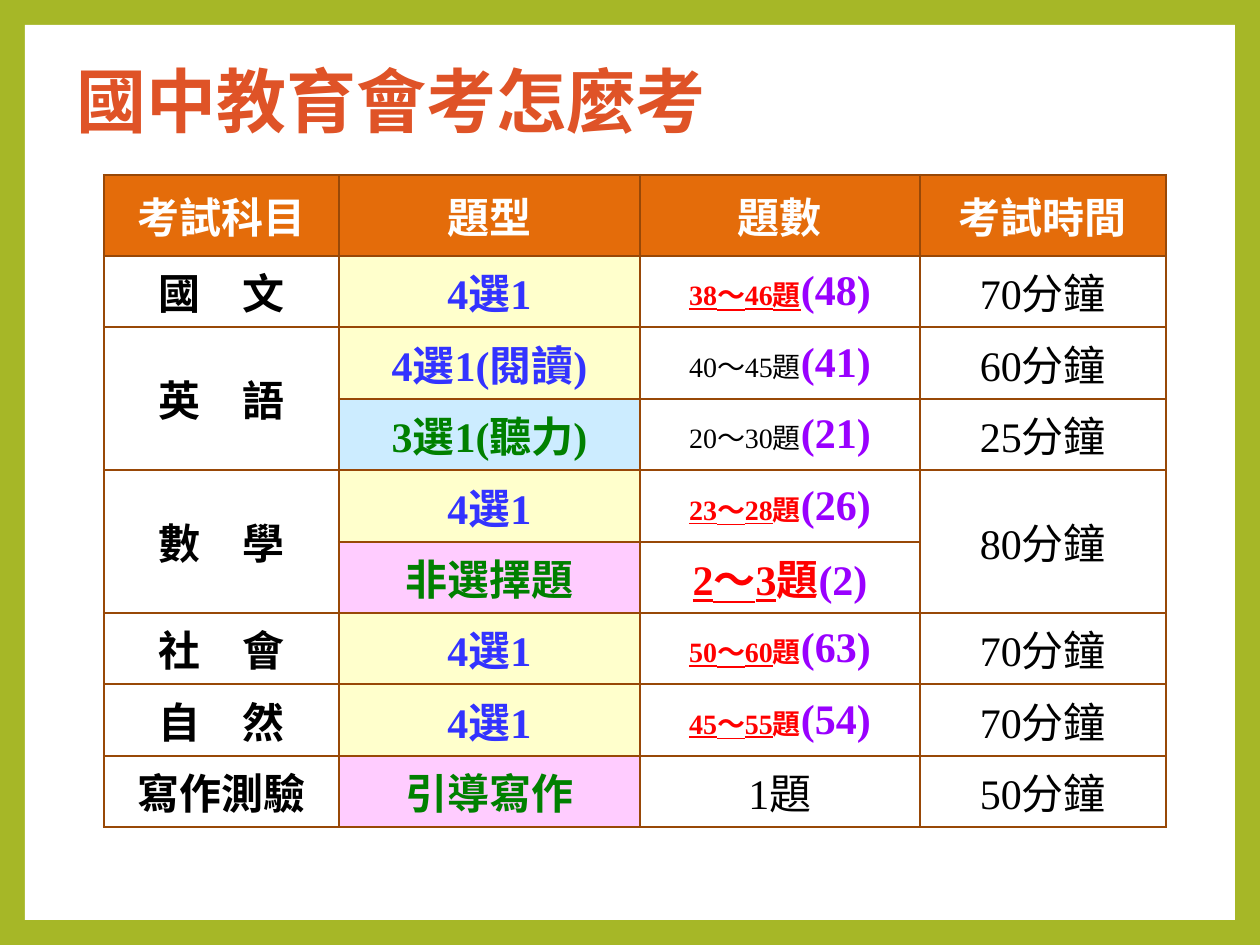
from dataclasses import dataclass

from lxml.etree import SubElement
from pptx import Presentation
from pptx.dml.color import RGBColor
from pptx.enum.shapes import MSO_SHAPE
from pptx.enum.text import MSO_ANCHOR, MSO_AUTO_SIZE, PP_ALIGN
from pptx.oxml import parse_xml
from pptx.oxml.ns import nsdecls, qn
from pptx.util import Emu, Pt

CJK_FONT = "Noto Sans CJK SC"
LATIN_FONT = "Times New Roman"
BLACK, WHITE, RED = "000000", "FFFFFF", "FF0000"
BLUE, GREEN, PURPLE = "3333FF", "008000", "9900FF"
YELLOW, SKY, PINK = "FFFFCC", "CCECFF", "FFCCFF"
LIME, ORANGE, BROWN, TITLE_RED = "A6B727", "E46C0A", "984807", "DF5327"

COLUMN_WIDTHS = (235, 301, 280, 246)
HEADER_HEIGHT, BODY_HEIGHT = 81, 571
CELL_INSET = 3


@dataclass(frozen=True)
class Span:
    text: str
    color: str = BLACK
    size: int = 24
    bold: bool = True
    underline: bool = False


@dataclass(frozen=True)
class Entry:
    spans: tuple[Span, ...]
    fill: str | None = None
    rows: int = 1


def px(length: int) -> Emu:
    return Emu(round(length * 914400 / 126))


def rgb(value: str) -> RGBColor:
    return RGBColor.from_string(value)


def write(paragraph, text: str, *, font: str = LATIN_FONT, size: int = 24,
          color: str = BLACK, bold: bool = True, underline: bool = False) -> None:
    run = paragraph.add_run()
    run.text = text
    run.font.name = font
    run.font.size = Pt(size)
    run.font.bold = bold
    run.font.underline = underline
    run.font.color.rgb = rgb(color)
    SubElement(run.font._element, qn("a:ea"), typeface=CJK_FONT)


def header(text: str) -> Entry:
    return Entry((Span(text, WHITE),), ORANGE)


def subject(text: str, rows: int = 1) -> Entry:
    return Entry((Span(text),), rows=rows)


def kind(text: str, color: str = BLUE, fill: str = YELLOW) -> Entry:
    return Entry((Span(text, color),), fill)


def plain(text: str, rows: int = 1) -> Entry:
    return Entry((Span(text, bold=False),), rows=rows)


def count(span_range: str, actual: str, size: int = 16,
          underline_unit: bool = False) -> Entry:
    """Red question range, with the actual number in purple."""
    return Entry((Span(span_range, RED, size, underline=True),
                  Span("題", RED, size, underline=underline_unit),
                  Span(actual, PURPLE)))


def plain_count(text: str, actual: str) -> Entry:
    return Entry((Span(text, size=16, bold=False), Span(actual, PURPLE)))


# None marks a cell covered by the merged cell above it.
ROWS: list[tuple[Entry | None, ...]] = [
    tuple(map(header, ("考試科目", "題型", "題數", "考試時間"))),
    (subject("國　文"), kind("4選1"),
     count("38～46", "(48)", underline_unit=True), plain("70分鐘")),
    (subject("英　語", 2), kind("4選1(閱讀)"),
     plain_count("40～45題", "(41)"), plain("60分鐘")),
    (None, kind("3選1(聽力)", GREEN, SKY),
     plain_count("20～30題", "(21)"), plain("25分鐘")),
    (subject("數　學", 2), kind("4選1"), count("23～28", "(26)"), plain("80分鐘", 2)),
    (None, kind("非選擇題", GREEN, PINK), count("2～3", "(2)", 24), None),
    (subject("社　會"), kind("4選1"), count("50～60", "(63)"), plain("70分鐘")),
    (subject("自　然"), kind("4選1"), count("45～55", "(54)"), plain("70分鐘")),
    (subject("寫作測驗"), kind("引導寫作", GREEN, PINK), plain("1題"), plain("50分鐘")),
]


def set_borders(cell) -> None:
    properties = cell._tc.get_or_add_tcPr()
    for position, side in enumerate(("lnL", "lnR", "lnT", "lnB")):
        properties.insert(position, parse_xml(
            f'<a:{side} {nsdecls("a")} w="{Pt(1.5)}"><a:solidFill>'
            f'<a:srgbClr val="{BROWN}"/></a:solidFill></a:{side}>'))


def fill_cell(cell, entry: Entry) -> None:
    cell.vertical_anchor = MSO_ANCHOR.MIDDLE
    cell.margin_left = cell.margin_right = px(CELL_INSET)
    cell.margin_top = cell.margin_bottom = px(CELL_INSET)
    if entry.fill:
        cell.fill.solid()
        cell.fill.fore_color.rgb = rgb(entry.fill)
    paragraph = cell.text_frame.paragraphs[0]
    paragraph.alignment = PP_ALIGN.CENTER
    for span in entry.spans:
        write(paragraph, span.text, size=span.size, color=span.color,
              bold=span.bold, underline=span.underline)


def add_exam_table(page) -> None:
    body_count = len(ROWS) - 1
    edges = [round(BODY_HEIGHT * i / body_count) for i in range(body_count + 1)]
    heights = [HEADER_HEIGHT] + [b - a for a, b in zip(edges, edges[1:])]
    table = page.shapes.add_table(
        len(ROWS), len(COLUMN_WIDTHS), px(104), px(175),
        px(sum(COLUMN_WIDTHS)), px(sum(heights))).table
    table.first_row = table.horz_banding = False
    for column, width in zip(table.columns, COLUMN_WIDTHS):
        column.width = px(width)
    for row, height in zip(table.rows, heights):
        row.height = px(height)
    for r, entries in enumerate(ROWS):
        for c, entry in enumerate(entries):
            cell = table.cell(r, c)
            cell.fill.background()
            set_borders(cell)
            if entry is None:
                continue
            if entry.rows > 1:
                cell.merge(table.cell(r + entry.rows - 1, c))
            fill_cell(cell, entry)


def add_title(page) -> None:
    title = page.shapes.title
    title.left, title.top, title.width, title.height = map(px, (64, 26, 1134, 158))
    frame = title.text_frame
    frame.auto_size = MSO_AUTO_SIZE.NONE
    frame.vertical_anchor = MSO_ANCHOR.MIDDLE
    paragraph = frame.paragraphs[0]
    paragraph.alignment = PP_ALIGN.LEFT
    paragraph.line_spacing = 0.9
    write(paragraph, "國中教育會考怎麼考", font=CJK_FONT, size=40, color=TITLE_RED)


def add_panel(page) -> None:
    """White sheet behind the title, leaving a green frame around it."""
    panel = page.shapes.add_shape(
        MSO_SHAPE.RECTANGLE, px(25), px(25), px(1210), px(895))
    panel.shadow.inherit = False
    panel.fill.solid()
    panel.fill.fore_color.rgb = rgb(WHITE)
    panel.line.fill.background()
    page.shapes.title.element.addprevious(panel.element)


def main() -> None:
    deck = Presentation()
    deck.slide_width, deck.slide_height = px(1260), px(945)
    page = deck.slides.add_slide(deck.slide_layouts[5])
    page.background.fill.solid()
    page.background.fill.fore_color.rgb = rgb(LIME)
    add_panel(page)
    add_title(page)
    add_exam_table(page)
    deck.save("out.pptx")


if __name__ == "__main__":
    main()
